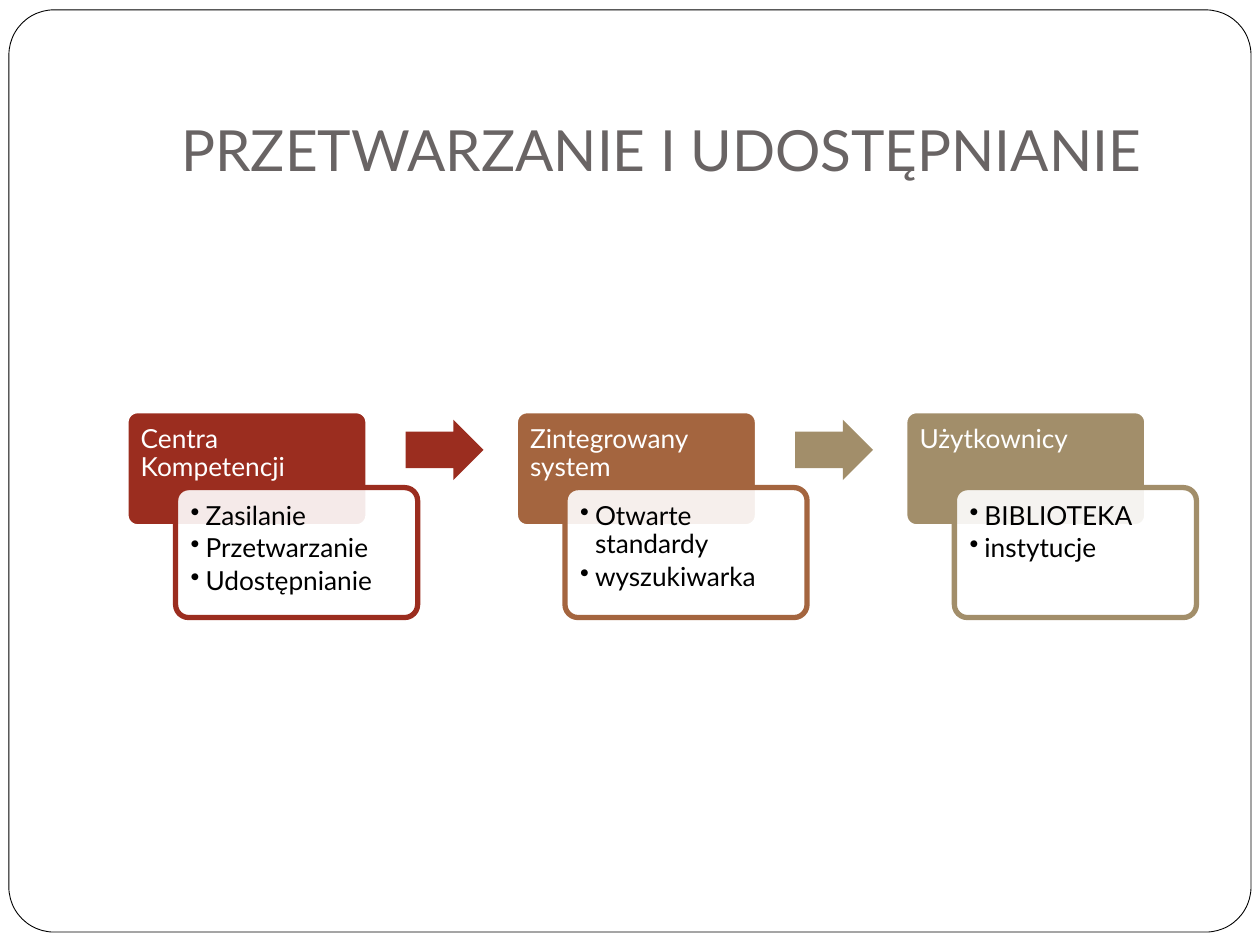
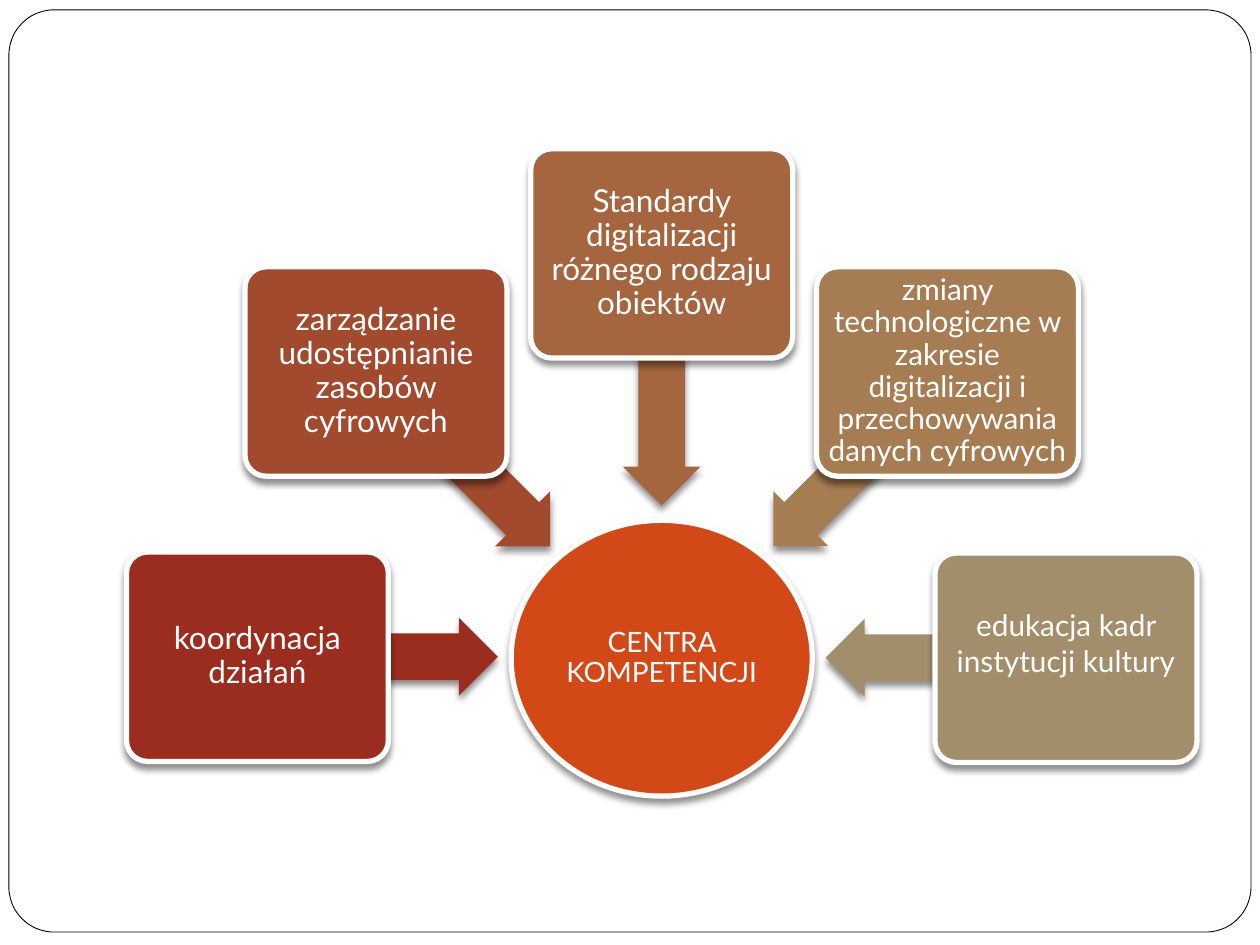
from lxml import etree
from pptx import Presentation
from pptx.dml.color import RGBColor
from pptx.enum.shapes import MSO_SHAPE
from pptx.enum.text import MSO_ANCHOR, PP_ALIGN
from pptx.oxml.ns import qn
from pptx.util import Cm, Pt

ROUNDED = MSO_SHAPE.ROUNDED_RECTANGLE
ELLIPSE = MSO_SHAPE.OVAL
RIGHT_ARROW = MSO_SHAPE.RIGHT_ARROW
LEFT_ARROW = MSO_SHAPE.LEFT_ARROW
TOP, MIDDLE, BOTTOM = MSO_ANCHOR.TOP, MSO_ANCHOR.MIDDLE, MSO_ANCHOR.BOTTOM
LEFT, CENTER = PP_ALIGN.LEFT, PP_ALIGN.CENTER

FONT = "Lato"
WHITE, BLACK, TITLE_GREY = "FFFFFF", "000000", "696464"
RED, BRICK, BROWN, OCHRE, SAND = "9B2D1F", "A14A2E", "A4653F", "A67D52", "A28E6A"
ORANGE = "D34817"

STAGES = [
    ("Centra Kompetencji", RED, ["Zasilanie", "Przetwarzanie", "Udostępnianie"]),
    ("Zintegrowany system", BROWN, ["Otwarte standardy", "wyszukiwarka"]),
    ("Użytkownicy", SAND, ["BIBLIOTEKA", "instytucje"]),
]
STAGE_LEFT, STAGE_TOP, STAGE_WIDTH, STAGE_PITCH = 2.54, 8.28, 4.88, 7.85

HUB_X, HUB_Y = 13.34, 13.27
TASK_WIDTH, TASK_HEIGHT, ARROW_HEIGHT = 5.28, 4.22, 1.57
TASKS = [
    ("koordynacja działań", RED, 18, (-8.15, 13.24), (-5.73, 13.24, 4.85)),
    ("zarządzanie udostępnianie zasobów cyfrowych", BRICK, 18,
     (-5.76, 7.49), (-4.01, 9.25, 4.98)),
    ("Standardy digitalizacji różnego rodzaju obiektów", BROWN, 18,
     (0, 5.11), (0, 7.65, 5.08)),
    ("zmiany technologiczne w zakresie digitalizacji i przechowywania danych cyfrowych",
     OCHRE, 17, (5.76, 7.49), (4.01, 9.25, 4.98)),
    ("edukacja kadr instytucji kultury", SAND, 17, (8.15, 13.26), (5.73, 13.26, 4.85)),
]


def color(hex_value):
    return RGBColor.from_string(hex_value)


def add_figure(slide, preset, box, fill, line=None, line_width=3, adjustments=()):
    figure = slide.shapes.add_shape(preset, *map(Cm, box))
    figure.shadow.inherit = False
    figure.fill.solid()
    figure.fill.fore_color.rgb = color(fill)
    if line:
        figure.line.color.rgb = color(line)
        figure.line.width = Pt(line_width)
    else:
        figure.line.fill.background()
    for index, value in enumerate(adjustments):
        figure.adjustments[index] = value
    return figure


def make_translucent(figure, percent):
    tint = figure.element.spPr.find(qn("a:solidFill")).find(qn("a:srgbClr"))
    etree.SubElement(tint, qn("a:alpha"), val=str(percent * 1000))


def cast_shadow(figure):
    effects = figure.element.spPr.find(qn("a:effectLst"))
    shadow = etree.SubElement(effects, qn("a:outerShdw"), blurRad=str(Pt(4)),
                              dist=str(Pt(3)), dir="5400000", rotWithShape="0")
    tint = etree.SubElement(shadow, qn("a:srgbClr"), val=BLACK)
    etree.SubElement(tint, qn("a:alpha"), val="43000")


def add_bullet(paragraph):
    properties = paragraph._p.get_or_add_pPr()
    properties.set("marL", str(Cm(0.3)))
    properties.set("indent", str(Cm(-0.3)))
    etree.SubElement(properties, qn("a:buChar"), char="•")


def write(figure, lines, size, ink=WHITE, align=CENTER, anchor=MIDDLE,
          insets=(0, 0, 0, 0), bulleted=False, spacing=0.9):
    frame = figure.text_frame
    frame.word_wrap = True
    frame.vertical_anchor = anchor
    (frame.margin_left, frame.margin_top,
     frame.margin_right, frame.margin_bottom) = map(Cm, insets)
    for index, line in enumerate(lines):
        paragraph = frame.add_paragraph() if index else frame.paragraphs[0]
        paragraph.text = line
        if bulleted:
            add_bullet(paragraph)
            paragraph.space_after = Pt(2.25)
        paragraph.alignment = align
        paragraph.line_spacing = spacing
        paragraph.font.name = FONT
        paragraph.font.size = Pt(size)
        paragraph.font.color.rgb = color(ink)


def add_framed_slide(deck):
    slide = deck.slides.add_slide(deck.slide_layouts[6])
    add_figure(slide, ROUNDED, (0.18, 0.2, 25.04, 18.59), WHITE, BLACK, 0.5, [0.049])
    return slide


def add_title(slide, text):
    title = slide.shapes.add_textbox(Cm(2.54), Cm(0.76), Cm(21.59), Cm(3.18))
    write(title, [text], 32.4, TITLE_GREY, anchor=BOTTOM,
          insets=(0.25, 0.13, 0.25, 0.25), spacing=1.0)


def add_stage(slide, left, heading, tint, details):
    header = add_figure(slide, ROUNDED, (left, STAGE_TOP, STAGE_WIDTH, 2.34),
                        tint, WHITE, adjustments=[0.1])
    write(header, [heading], 15, align=LEFT, anchor=TOP, insets=(0.23, 0.23, 0.23, 0.1))
    card = add_figure(slide, ROUNDED, (left + 1, STAGE_TOP + 1.55, STAGE_WIDTH, 2.62),
                      WHITE, tint, adjustments=[0.1])
    make_translucent(card, 90)
    write(card, details, 15, BLACK, LEFT, TOP, (0.23, 0.23, 0.23, 0.23), bulleted=True)


def add_process(slide):
    for index, (heading, tint, details) in enumerate(STAGES):
        left = STAGE_LEFT + index * STAGE_PITCH
        if index:
            arrow_tint = RED if index == 1 else SAND
            add_figure(slide, RIGHT_ARROW, (left - 2.21, STAGE_TOP + 0.18, 1.57, 1.22),
                       arrow_tint, adjustments=[0.6, 0.5])
        add_stage(slide, left, heading, tint, details)


def centred(x, y, width, height):
    return x - width / 2, y - height / 2, width, height


def add_hub(slide, text):
    hub = add_figure(slide, ELLIPSE, centred(HUB_X, HUB_Y, 6.07, 5.56), ORANGE, WHITE)
    cast_shadow(hub)
    write(hub, [text], 16)


def add_task(slide, text, tint, size, position, pointer, rotation):
    arrow_x, arrow_y, length = pointer
    arrow = add_figure(slide, LEFT_ARROW,
                       centred(HUB_X + arrow_x, arrow_y, length, ARROW_HEIGHT),
                       tint, adjustments=[0.6, 0.5])
    arrow.rotation = rotation
    cast_shadow(arrow)
    task_x, task_y = position
    task = add_figure(slide, ROUNDED,
                      centred(HUB_X + task_x, task_y, TASK_WIDTH, TASK_HEIGHT),
                      tint, WHITE, adjustments=[0.1])
    cast_shadow(task)
    is_last = rotation == 0
    write(task, [text], size, insets=(0, 0, 0, 0.6 if is_last else 0),
          spacing=1.0 if is_last else 0.9)


def main():
    deck = Presentation()
    deck.slide_width, deck.slide_height = Cm(25.4), Cm(19.05)

    process_slide = add_framed_slide(deck)
    add_title(process_slide, "PRZETWARZANIE I UDOSTĘPNIANIE")
    add_process(process_slide)

    centres_slide = add_framed_slide(deck)
    add_hub(centres_slide, "CENTRA KOMPETENCJI")
    for index, task in enumerate(TASKS):
        add_task(centres_slide, *task, rotation=(180 + 45 * index) % 360)

    deck.save("out.pptx")


if __name__ == "__main__":
    main()
